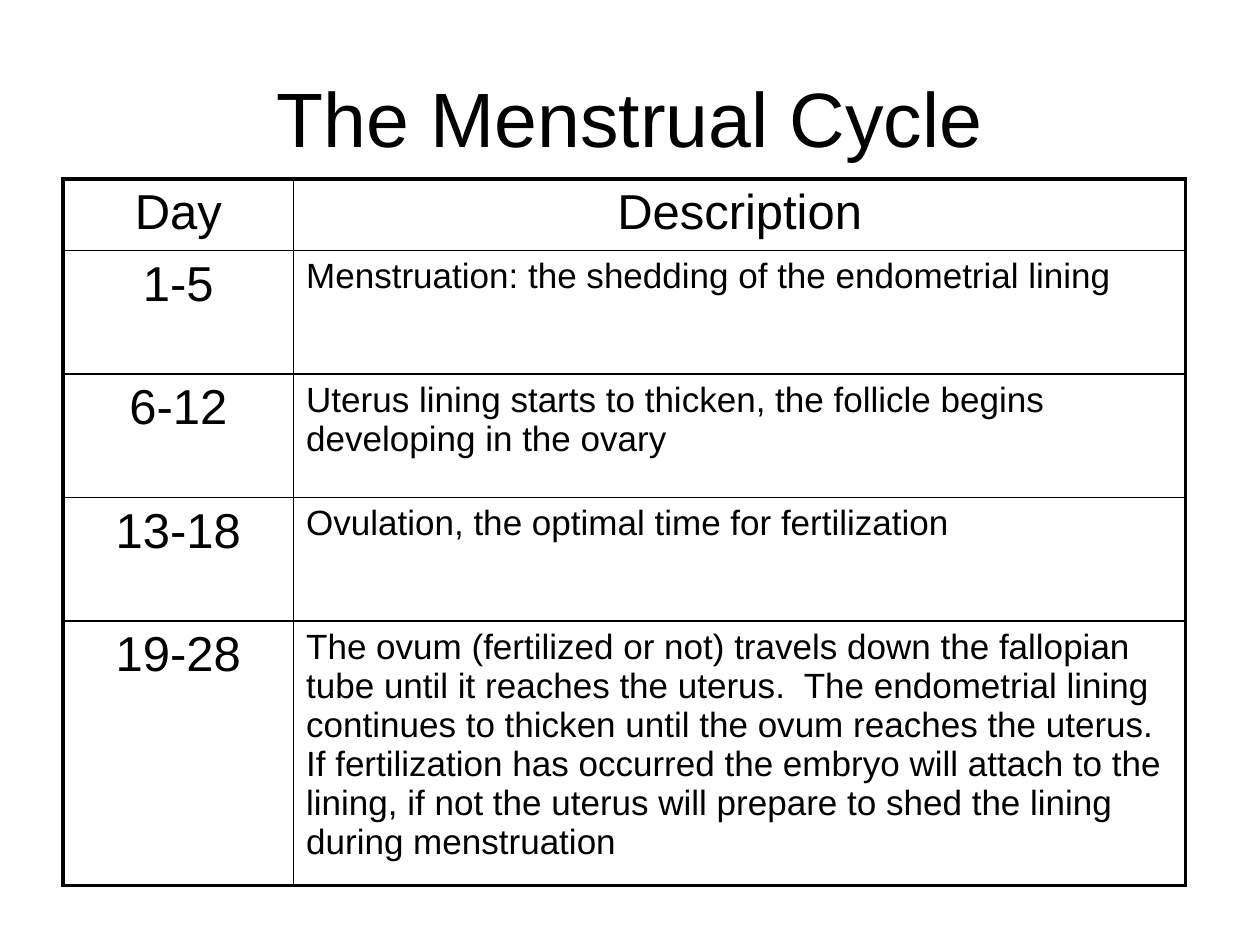
from pptx import Presentation
from pptx.dml.color import RGBColor
from pptx.enum.text import MSO_ANCHOR as Anchor, PP_ALIGN as Align
from pptx.oxml.ns import qn
from pptx.util import Inches, Pt
from lxml.etree import SubElement

BLACK = RGBColor(0, 0, 0)
WHITE = RGBColor(255, 255, 255)
HEADING = {"size": Pt(44)}
LABEL = {"size": Pt(28)}
DETAIL = {"size": Pt(20)}
OUTER, INNER = Pt(2.25), Pt(1)

PHASES = [
    ("Day", "Description"),
    ("1-5", "Menstruation: the shedding of the endometrial lining"),
    ("6-12", "Uterus lining starts to thicken, the follicle begins "
             "developing in the ovary"),
    ("13-18", "Ovulation, the optimal time for fertilization"),
    ("19-28", "The ovum (fertilized or not) travels down the fallopian tube "
              "until it reaches the uterus.  The endometrial lining continues "
              "to thicken until the ovum reaches the uterus.  If fertilization "
              "has occurred the embryo will attach to the lining, if not the "
              "uterus will prepare to shed the lining during menstruation"),
]
COLUMN_WIDTHS = [1.83, 7.08]
ROW_HEIGHTS = [0.57, 0.98, 0.98, 0.98, 2.1]


class SlideBuilder:
    """Holds the text style and the current slide, and adds its elements."""

    font_format = {"name": "Arial", "bold": False}

    def __init__(self, deck):
        self.slide = deck.slides.add_slide(deck.slide_layouts[5])

    def text(self, frame, wording, align, font_format):
        paragraph = frame.paragraphs[0]
        paragraph.alignment = align
        run = paragraph.add_run()
        run.text = wording
        for key, value in {**self.font_format, **font_format}.items():
            setattr(run.font, key, value)
        run.font.color.rgb = BLACK
        return paragraph

    def title(self, wording, left, top, width, height):
        heading = self.slide.shapes.title
        place = {"left": left, "top": top, "width": width, "height": height}
        for key, value in place.items():
            setattr(heading, key, Inches(value))
        heading.text_frame.vertical_anchor = Anchor.MIDDLE
        self.text(heading.text_frame, wording, Align.CENTER, HEADING)

    def borders(self, cell, widths):
        properties = cell._tc.get_or_add_tcPr()
        for side, width in widths.items():
            line = SubElement(properties, qn(f"a:ln{side}"), w=str(width))
            fill = SubElement(line, qn("a:solidFill"))
            SubElement(fill, qn("a:srgbClr"), val=str(BLACK))

    def cell(self, cell, wording, align, font_format, widths):
        paragraph = self.text(cell.text_frame, wording, align, font_format)
        spacing = SubElement(paragraph._p.get_or_add_pPr(), qn("a:spcBef"))
        SubElement(spacing, qn("a:spcPct"), val="20000")
        self.borders(cell, widths)
        cell.fill.solid()
        cell.fill.fore_color.rgb = WHITE

    def table(self, rows, left, top, column_widths, row_heights):
        grid = self.slide.shapes.add_table(
            len(rows), len(column_widths), Inches(left), Inches(top),
            Inches(sum(column_widths)), Inches(sum(row_heights))).table
        for key in ("first_row", "horz_banding"):
            setattr(grid, key, False)
        for column, width in zip(grid.columns, column_widths):
            column.width = Inches(width)
        for row, height in zip(grid.rows, row_heights):
            row.height = Inches(height)
        last_row, last_column = len(rows) - 1, len(column_widths) - 1
        for r, wordings in enumerate(rows):
            for c, wording in enumerate(wordings):
                edges = {"L": c == 0, "R": c == last_column,
                         "T": r == 0, "B": r == last_row}
                widths = {side: OUTER if edge else INNER
                          for side, edge in edges.items()}
                is_label = r == 0 or c == 0
                self.cell(grid.cell(r, c), wording,
                          Align.CENTER if is_label else Align.LEFT,
                          LABEL if is_label else DETAIL, widths)


def main():
    deck = Presentation()
    deck.slide_width, deck.slide_height = Inches(10), Inches(7.5)
    builder = SlideBuilder(deck)
    builder.title("The Menstrual Cycle", 0.5, 0.3, 9, 1.25)
    builder.table(PHASES, 0.5, 1.42, COLUMN_WIDTHS, ROW_HEIGHTS)
    deck.save("out.pptx")


if __name__ == "__main__":
    main()
